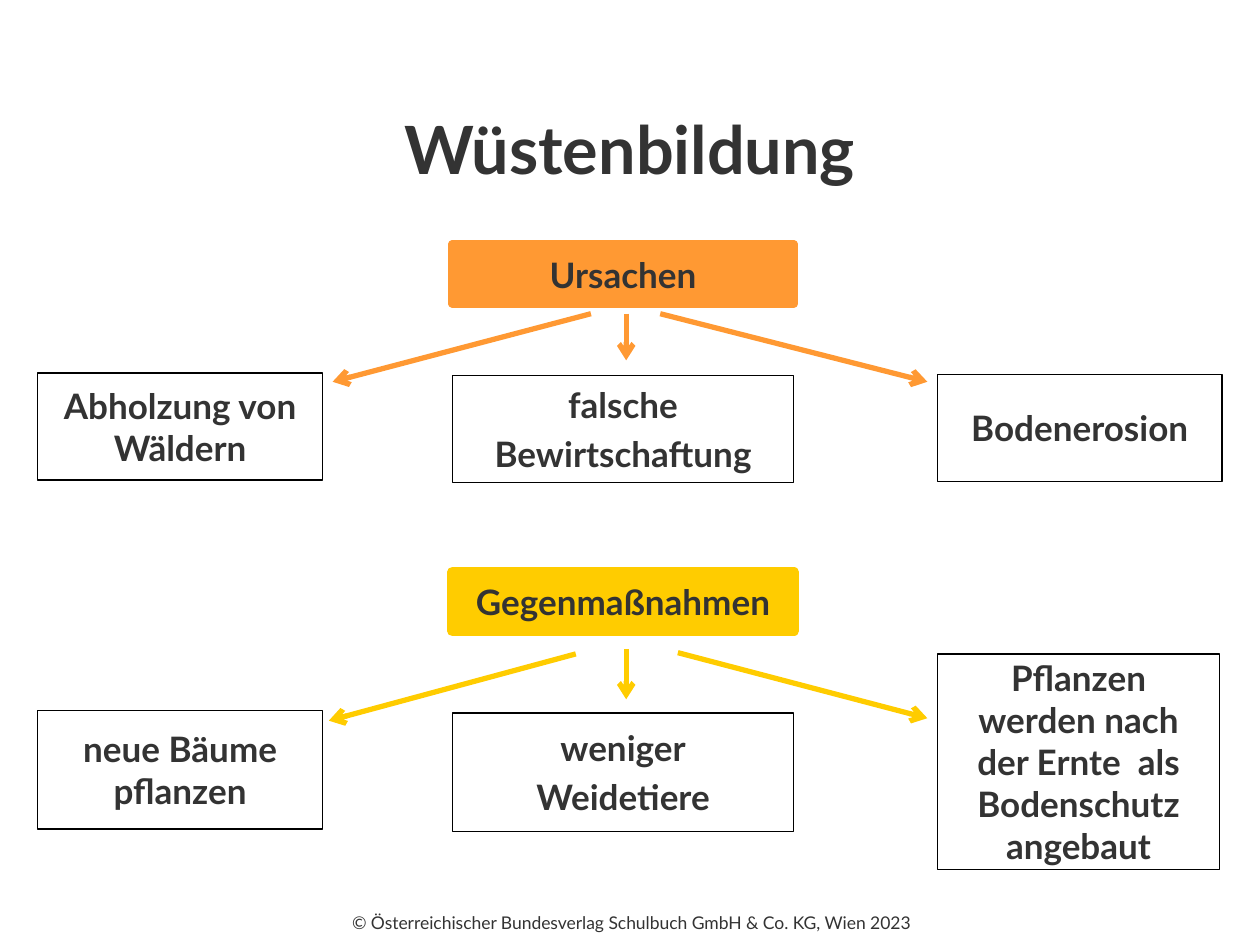
from lxml import etree
from pptx import Presentation
from pptx.dml.color import RGBColor
from pptx.enum.shapes import MSO_CONNECTOR, MSO_SHAPE
from pptx.enum.text import MSO_ANCHOR as Anchor, PP_ALIGN as Align
from pptx.oxml.ns import qn
from pptx.util import Inches, Pt

TEXT = RGBColor(0x33, 0x33, 0x33)
BLACK = RGBColor(0x00, 0x00, 0x00)
ORANGE = RGBColor(0xFF, 0x99, 0x33)
YELLOW = RGBColor(0xFF, 0xCC, 0x00)
FONT = "Lato"

# Left edge and width of the three columns
SIDE_WIDTH, MIDDLE_WIDTH = 2.26, 2.71
LEFT, MIDDLE, RIGHT = 0.3, 3.59, 7.44


def write(shape, lines, size, bold=True):
    """Fill a shape with centred paragraphs."""
    frame = shape.text_frame
    frame.word_wrap = True
    frame.vertical_anchor = Anchor.MIDDLE
    for index, line in enumerate(lines):
        para = frame.add_paragraph() if index else frame.paragraphs[0]
        para.text = line
        para.alignment = Align.CENTER
        para.space_before = Pt(4 if index else 0)
        para.font.name = FONT
        para.font.size = Pt(size)
        para.font.bold = bold
        para.font.color.rgb = TEXT


def add_box(page, box, lines, fill=None, line=BLACK, line_width=0.75):
    shape = page.shapes.add_shape(MSO_SHAPE.RECTANGLE, *map(Inches, box))
    shape.shadow.inherit = False
    if fill is None:
        shape.fill.background()
    else:
        shape.fill.solid()
        shape.fill.fore_color.rgb = fill
    shape.line.color.rgb = line
    shape.line.width = Pt(line_width)
    write(shape, lines, 20)


def add_arrow(page, start, end, color):
    arrow = page.shapes.add_connector(
        MSO_CONNECTOR.STRAIGHT, *map(Inches, start + end))
    arrow.line.color.rgb = color
    arrow.line.width = Pt(3)
    etree.SubElement(arrow.line._get_or_add_ln(), qn("a:tailEnd"), type="arrow")
    etree.SubElement(arrow._element.spPr, qn("a:effectLst"))


def add_title(page, box, text):
    title = page.shapes.title
    title.left, title.top, title.width, title.height = map(Inches, box)
    write(title, [text], 38)


def add_branch(page, top, heading, color, line_width, arrows, boxes):
    """A coloured heading whose arrows lead to the boxes below it."""
    add_box(page, (MIDDLE, top, MIDDLE_WIDTH, 0.47), [heading],
            color, color, line_width)
    for start, end in arrows:
        add_arrow(page, start, end, color)
    for box, lines in boxes:
        add_box(page, box, lines)


def add_copyright(page, box, text):
    write(page.shapes.add_textbox(*map(Inches, box)), [text], 10, bold=False)


def main():
    deck = Presentation()
    deck.slide_width, deck.slide_height = Inches(10), Inches(7.5)
    page = deck.slides.add_slide(deck.slide_layouts[5])

    add_title(page, (0.5, 0.8, 9, 0.74), "Wüstenbildung")

    # Causes
    add_branch(
        page, 1.94, "Ursachen", ORANGE, 4.5,
        arrows=[((4.97, 2.49), (4.97, 2.86)),
                ((4.69, 2.49), (2.64, 3.03)),
                ((5.24, 2.49), (7.36, 3.03))],
        boxes=[((LEFT, 2.96, SIDE_WIDTH, 0.85), ["Abholzung von Wäldern"]),
               ((MIDDLE, 2.98, MIDDLE_WIDTH, 0.85),
                ["falsche", "Bewirtschaftung"]),
               ((RIGHT, 2.97, SIDE_WIDTH, 0.85), ["Bodenerosion"])])

    # Countermeasures
    add_branch(
        page, 4.54, "Gegenmaßnahmen", YELLOW, 6,
        arrows=[((4.97, 5.15), (4.97, 5.55)),
                ((4.57, 5.19), (2.61, 5.72)),
                ((5.38, 5.18), (7.36, 5.7))],
        boxes=[((LEFT, 5.64, SIDE_WIDTH, 0.94), ["neue Bäume pflanzen"]),
               ((MIDDLE, 5.66, MIDDLE_WIDTH, 0.94), ["weniger", "Weidetiere"]),
               ((RIGHT, 5.19, 2.24, 1.71),
                ["Pflanzen werden nach der Ernte  als Bodenschutz angebaut"])])

    add_copyright(
        page, (0.06, 7.17, 9.9, 0.3),
        "© Österreichischer Bundesverlag Schulbuch GmbH & Co. KG, Wien 2023")

    deck.save("out.pptx")


if __name__ == "__main__":
    main()
